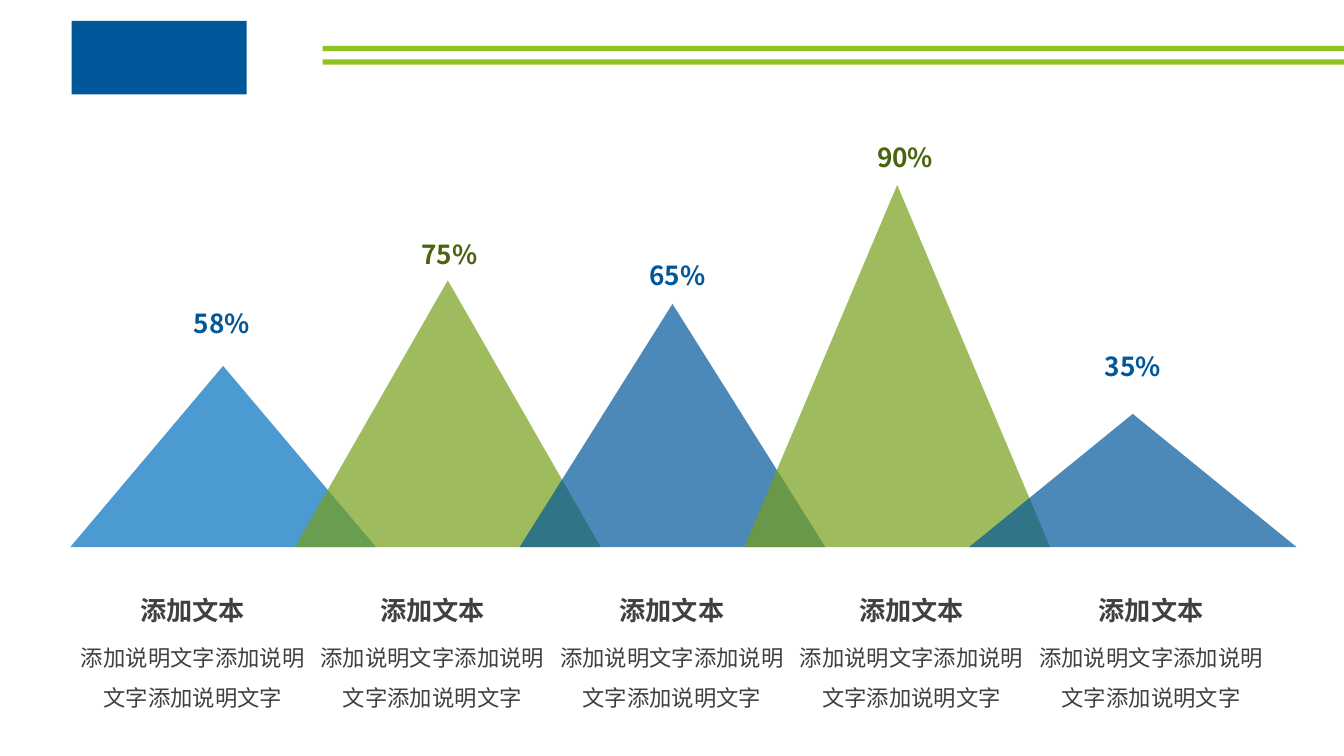
from lxml import etree
from pptx import Presentation
from pptx.dml.color import RGBColor
from pptx.enum import shapes, text
from pptx.oxml.ns import qn
from pptx.util import Pt

SKY = RGBColor(0x00, 0x70, 0xC0)
BLUE = RGBColor(0x00, 0x58, 0x9A)
GREEN = RGBColor(0x76, 0x9F, 0x19)
DARK_GREEN = RGBColor(0x4A, 0x64, 0x10)
LIME = RGBColor(0x8F, 0xC3, 0x1F)
GREY = RGBColor(0x40, 0x40, 0x40)
FONT = "Noto Sans CJK SC"

HEADING = "添加文本"
DETAIL = "添加说明文字添加说明文字添加说明文字"
PEAKS = [
    ("58%", SKY, BLUE, 217.8, 182, 176.4),
    ("75%", GREEN, DARK_GREEN, 166.9, 182, 135.4),
    ("65%", BLUE, BLUE, 180.9, 182, 147.6),
    ("90%", GREEN, DARK_GREEN, 110.1, 182, 77.8),
    ("35%", BLUE, BLUE, 246.4, 195, 202.3),
]
BASELINE = 325.7
PEAK_LEFT, PEAK_STEP = 41.8, 133.75
LABEL_LEFT, LABEL_STEP = 104.4, 135.55
CAPTION_LEFT, CAPTION_STEP = 41, 142.6
RULE_TOPS = (27.3, 35.3)

prs = Presentation()
prs.slide_width, prs.slide_height = Pt(800), Pt(450)
s = prs.slides.add_slide(prs.slide_layouts[6])


def add_block(kind, box, color, opacity=100):
    sp = s.shapes.add_shape(kind, *map(Pt, box))
    sp.shadow.inherit = False
    sp.fill.solid()
    sp.fill.fore_color.rgb = color
    sp.line.fill.background()
    if opacity < 100:
        clr = sp.fill._xPr.find(".//" + qn("a:srgbClr"))
        etree.SubElement(clr, qn("a:alpha")).set("val", str(opacity * 1000))


def add_text(tf, content, size, color, bold=False, spacing=None, before=0, first=True):
    p = tf.paragraphs[0] if first else tf.add_paragraph()
    p.alignment = text.PP_ALIGN.CENTER
    p.space_before = Pt(before)
    if spacing:
        p.line_spacing = spacing
    r = p.add_run()
    r.text = content
    r.font.size, r.font.bold, r.font.name = Pt(size), bold, FONT
    r.font.color.rgb = color
    etree.SubElement(r.font._element, qn("a:ea")).set("typeface", FONT)


def add_box(box, anchor):
    tf = s.shapes.add_textbox(*map(Pt, box)).text_frame
    tf.word_wrap = True
    tf.vertical_anchor = anchor
    tf.margin_left = tf.margin_right = Pt(6)
    tf.margin_top = tf.margin_bottom = Pt(3)
    return tf


for top in RULE_TOPS:
    add_block(shapes.MSO_SHAPE.RECTANGLE, (192, top, 608, 3.2), LIME)
add_block(shapes.MSO_SHAPE.RECTANGLE, (42.6, 12.4, 104.2, 43.8), BLUE)

for i, (_, fill, _, top, width, _) in enumerate(PEAKS):
    box = (PEAK_LEFT + i * PEAK_STEP, top, width, BASELINE - top)
    add_block(shapes.MSO_SHAPE.ISOSCELES_TRIANGLE, box, fill, opacity=70)

for i, (label, _, color, _, _, top) in enumerate(PEAKS):
    tf = add_box((LABEL_LEFT + i * LABEL_STEP, top, 55.4, 31.7), text.MSO_ANCHOR.MIDDLE)
    add_text(tf, label, 15.6, color, bold=True)

for i in range(len(PEAKS)):
    tf = add_box((CAPTION_LEFT + i * CAPTION_STEP, 350.6, 147.6, 75.6), text.MSO_ANCHOR.TOP)
    add_text(tf, HEADING, 15.6, GREY, bold=True)
    add_text(tf, DETAIL, 13.3, GREY, spacing=1.5, before=3.3, first=False)

prs.save("out.pptx")
